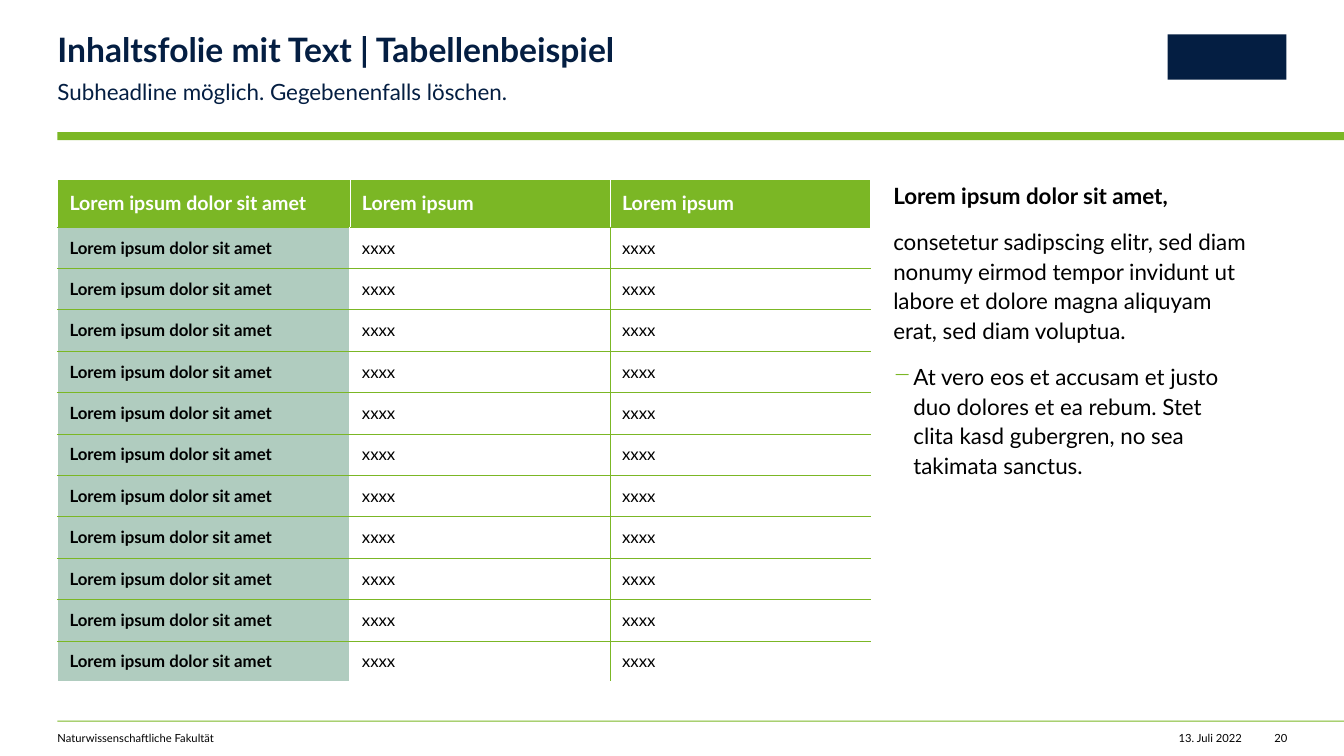
from lxml import etree
from pptx import Presentation
from pptx.dml.color import RGBColor
from pptx.enum.shapes import MSO_SHAPE
from pptx.enum.text import MSO_ANCHOR, PP_ALIGN
from pptx.oxml.ns import qn
from pptx.util import Inches, Pt

RECTANGLE = MSO_SHAPE.RECTANGLE
LEFT, RIGHT = PP_ALIGN.LEFT, PP_ALIGN.RIGHT
MIDDLE = MSO_ANCHOR.MIDDLE

GREEN = RGBColor(0x7B, 0xB7, 0x25)
SAGE = RGBColor(0xB0, 0xCC, 0xBF)
NAVY = RGBColor(0x04, 0x1E, 0x42)
BLACK = RGBColor(0, 0, 0)
WHITE = RGBColor(0xFF, 0xFF, 0xFF)
FONT = "Lato"

# Content
TITLE = "Inhaltsfolie mit Text | Tabellenbeispiel"
SUBHEADLINE = "Subheadline möglich. Gegebenenfalls löschen."
HEADER = ("Lorem ipsum dolor sit amet", "Lorem ipsum", "Lorem ipsum")
BODY_ROWS = [("Lorem ipsum dolor sit amet", "xxxx", "xxxx")] * 11
SIDE_TEXT = [  # text, bold, bulleted
    ("Lorem ipsum dolor sit amet,", True, False),
    ("consetetur sadipscing elitr, sed diam nonumy eirmod tempor invidunt ut "
     "labore et dolore magna aliquyam erat, sed diam voluptua.", False, False),
    ("At vero eos et accusam et justo duo dolores et ea rebum. Stet clita kasd "
     "gubergren, no sea takimata sanctus.", False, True),
]
FOOTER = [  # text, left, width, alignment, wrap
    ("Naturwissenschaftliche Fakultät", 0.57, 5.98, LEFT, True),
    ("13. Juli 2022", 11.58, 0.74, RIGHT, False),
    ("20", 12.63, 0.14, RIGHT, False),
]

# Page grid in inches
PAGE_W, PAGE_H = 13.33, 7.5
MARGIN = 0.57
CONTENT_RIGHT = PAGE_W - MARGIN
CONTENT_TOP = 1.78
SIDE_LEFT = 8.86
COLUMN_WIDTHS = (2.9, 2.58, 2.58)
TABLE_H, HEADER_H = 4.99, 0.47
ROW_H = (TABLE_H - HEADER_H) / len(BODY_ROWS)


def add_block(slide, left, top, width, height, color):
    block = slide.shapes.add_shape(
        RECTANGLE, Inches(left), Inches(top), Inches(width), Inches(height))
    block.shadow.inherit = False
    block.fill.solid()
    block.fill.fore_color.rgb = color
    block.line.fill.background()


def style(paragraph, size, color, bold=False):
    font = paragraph.font
    font.name, font.size, font.bold = FONT, Pt(size), bold
    font.color.rgb = color


def add_frame(slide, left, top, width, height, inset_right=0.0, wrap=True):
    frame = slide.shapes.add_textbox(
        Inches(left), Inches(top), Inches(width), Inches(height)).text_frame
    frame.margin_left = frame.margin_top = frame.margin_bottom = 0
    frame.margin_right = Inches(inset_right)
    frame.word_wrap = wrap
    return frame


def add_bullet(paragraph):
    props = paragraph._p.get_or_add_pPr()
    props.set("marL", str(Inches(0.2)))
    props.set("indent", str(Inches(-0.2)))
    color = etree.SubElement(props, qn("a:buClr"))
    etree.SubElement(color, qn("a:srgbClr"), val=str(GREEN))
    etree.SubElement(props, qn("a:buChar"), char="−")


def add_border(cell, side, color, points):
    line = etree.SubElement(cell._tc.get_or_add_tcPr(), qn(f"a:ln{side}"),
                            w=str(Pt(points)))
    fill = etree.SubElement(line, qn("a:solidFill"))
    etree.SubElement(fill, qn("a:srgbClr"), val=str(color))


def cell_borders(row, column):
    """Side, colour and width of each border, in schema order."""
    thin_green = (GREEN, 0.25)
    if row == 0:
        inner = (WHITE, 0.5)
        return [("L", *(inner if column else (WHITE, 1))), ("R", *inner),
                ("T", WHITE, 1), ("B", *thin_green)]
    borders = []
    borders.append(("L", *(thin_green if column == 2 else (WHITE, 1))))
    borders.append(("R", *(thin_green if column == 1 else (WHITE, 1))))
    borders.append(("T", *thin_green))
    borders.append(("B", *((WHITE, 1) if row == len(BODY_ROWS) else thin_green)))
    return borders


def add_content_table(slide):
    rows = [HEADER, *BODY_ROWS]
    table = slide.shapes.add_table(
        len(rows), len(HEADER), Inches(MARGIN), Inches(CONTENT_TOP),
        Inches(sum(COLUMN_WIDTHS)), Inches(TABLE_H)).table
    table.horz_banding = False
    for column, width in zip(table.columns, COLUMN_WIDTHS):
        column.width = Inches(width)
    for r, texts in enumerate(rows):
        is_header = r == 0
        table.rows[r].height = Inches(HEADER_H if is_header else ROW_H)
        for c, text in enumerate(texts):
            cell = table.cell(r, c)
            cell.margin_left = cell.margin_right = Inches(0.12)
            cell.margin_top = cell.margin_bottom = Inches(0.04)
            cell.vertical_anchor = MIDDLE
            for border in cell_borders(r, c):
                add_border(cell, *border)
            if is_header or c == 0:
                cell.fill.solid()
                cell.fill.fore_color.rgb = GREEN if is_header else SAGE
            else:
                cell.fill.background()
            cell.text = text
            style(cell.text_frame.paragraphs[0], 14 if is_header else 12,
                  WHITE if is_header else BLACK, is_header or c == 0)


def main():
    deck = Presentation()
    deck.slide_width, deck.slide_height = Inches(PAGE_W), Inches(PAGE_H)
    slide = deck.slides.add_slide(deck.slide_layouts[6])

    # Rules across the page and a plain block in the logo's place
    for top, height in ((1.31, 0.08), (7.15, 0.01)):
        add_block(slide, MARGIN, top, PAGE_W - MARGIN, height, GREEN)
    add_block(slide, CONTENT_RIGHT - 1.18, 0.34, 1.18, 0.45, NAVY)

    # Heading
    title = add_frame(slide, MARGIN, 0.33, 7.49, 0.36).paragraphs[0]
    title.text, title.line_spacing = TITLE, 0.9
    style(title, 24, NAVY, True)
    subheadline = add_frame(slide, MARGIN, 0.75, 7.49, 0.27, 0.39).paragraphs[0]
    subheadline.text, subheadline.line_spacing = SUBHEADLINE, 1.1
    style(subheadline, 16, NAVY)

    # Table and text beside it
    add_content_table(slide)
    side = add_frame(slide, SIDE_LEFT, CONTENT_TOP,
                     CONTENT_RIGHT - SIDE_LEFT, 5, 0.39)
    for i, (text, bold, bulleted) in enumerate(SIDE_TEXT):
        paragraph = side.add_paragraph() if i else side.paragraphs[0]
        paragraph.text = text
        if bulleted:
            add_bullet(paragraph)
        paragraph.line_spacing, paragraph.space_after = 1.1, Pt(12)
        style(paragraph, 16, BLACK, bold)

    # Footer
    for text, left, width, alignment, wrap in FOOTER:
        note = add_frame(slide, left, 7.26, width, 0.13, wrap=wrap).paragraphs[0]
        note.text, note.alignment = text, alignment
        style(note, 8, BLACK)

    deck.save("out.pptx")


if __name__ == "__main__":
    main()
